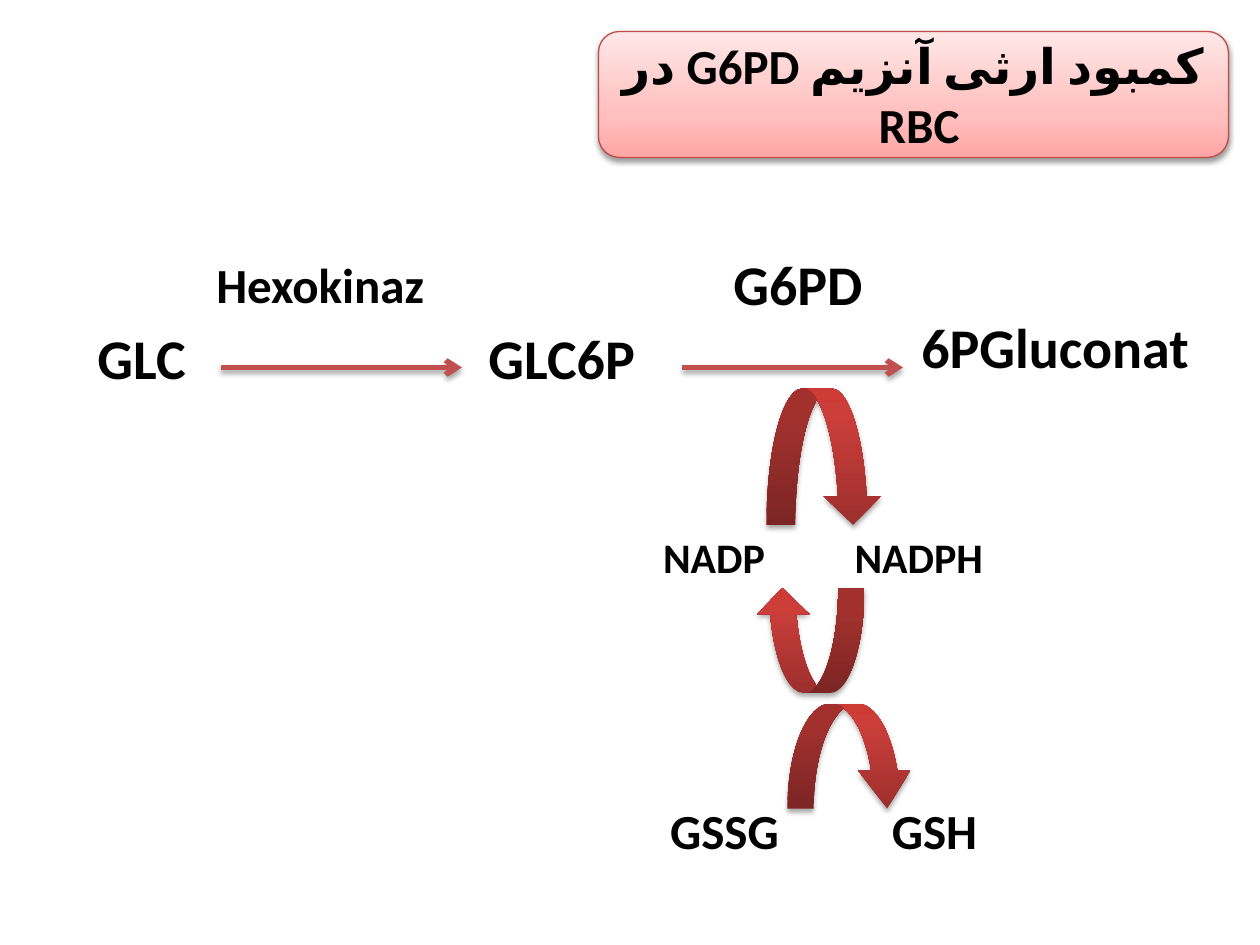
import copy

from lxml import etree
from pptx import Presentation
from pptx import util as u
from pptx.dml.color import RGBColor
from pptx.enum import shapes, text
from pptx.oxml.ns import qn

Pt = u.Pt
WHITE = RGBColor(0xFF, 0xFF, 0xFF)
BLACK = RGBColor(0, 0, 0)
RED = RGBColor(0xC0, 0x50, 0x4D)
TITLE_EDGE = RGBColor(0xBF, 0x4C, 0x48)
ARROW_STOPS = [(0, RGBColor(0x9C, 0x2F, 0x2D)), (0.8, RGBColor(0xCB, 0x3E, 0x3A)),
               (1, RGBColor(0xCE, 0x3B, 0x37))]
TITLE_STOPS = [(0, RGBColor(0xFF, 0xA6, 0xA5)), (0.35, RGBColor(0xFF, 0xC0, 0xBF)),
               (1, RGBColor(0xFF, 0xE7, 0xE7))]
RECT = shapes.MSO_SHAPE.RECTANGLE
ROUNDED = shapes.MSO_SHAPE.ROUNDED_RECTANGLE
DOWN = shapes.MSO_SHAPE.CURVED_DOWN_ARROW
UP = shapes.MSO_SHAPE.CURVED_UP_ARROW


def set_attrs(obj, **fmt):
    for name, value in fmt.items():
        setattr(obj, name, value)


def add_shadow(sp, opacity, distance):
    spPr = sp._element.spPr
    effects = spPr.find(qn("a:effectLst"))
    if effects is None:
        effects = etree.SubElement(spPr, qn("a:effectLst"))
    shadow = etree.SubElement(effects, qn("a:outerShdw"), blurRad=str(Pt(3.1)),
                              dist=str(Pt(distance)), dir="5400000", rotWithShape="0")
    color = etree.SubElement(shadow, qn("a:srgbClr"), val=str(BLACK))
    etree.SubElement(color, qn("a:alpha"), val=str(opacity * 1000))


def fill_gradient(sp, stops):
    sp.fill.gradient()
    sp.fill.gradient_angle = 90
    gs_list = sp._element.spPr.find(qn("a:gradFill")).find(qn("a:gsLst"))
    gs_list.append(copy.deepcopy(gs_list[-1]))
    for stop, (position, color) in zip(sp.fill.gradient_stops, stops):
        stop.position = position
        stop.color.rgb = color


def add_shape(s, kind, x, y, w, h):
    sp = s.shapes.add_shape(kind, Pt(x), Pt(y), Pt(w), Pt(h))
    sp.shadow.inherit = False
    return sp


def write_text(sp, words, size):
    tf = sp.text_frame
    set_attrs(tf, word_wrap=True, vertical_anchor=text.MSO_ANCHOR.MIDDLE)
    p = tf.paragraphs[0]
    p.alignment = text.PP_ALIGN.CENTER
    r = p.add_run()
    r.text = words
    set_attrs(r.font, name="Calibri", size=Pt(size), bold=True)
    r.font.color.rgb = BLACK
    return p


def add_label(s, words, size, x, y, w, h=72):
    sp = add_shape(s, RECT, x, y, w, h)
    sp.fill.solid()
    sp.fill.fore_color.rgb = WHITE
    sp.line.color.rgb = WHITE
    sp.line.width = Pt(2)
    write_text(sp, words, size)


def add_reaction(s, x1, x2, y):
    cx = s.shapes.add_connector(shapes.MSO_CONNECTOR.STRAIGHT, Pt(x1), Pt(y), Pt(x2), Pt(y))
    cx.line.color.rgb = RED
    cx.line.width = Pt(3)
    etree.SubElement(cx.line._get_or_add_ln(), qn("a:tailEnd"), type="arrow")
    add_shadow(cx, 35, 1.8)


def add_curved_arrow(s, kind, x, y, w, h, head=None, flip=False):
    sp = add_shape(s, kind, x, y, w, h)
    fill_gradient(sp, ARROW_STOPS)
    sp.line.fill.background()
    add_shadow(sp, 35, 1.8)
    if head:
        sp.adjustments[2] = head
    if flip:
        sp._element.spPr.find(qn("a:xfrm")).set("flipH", "1")


def build_title(s, x, y, w, h):
    sp = add_shape(s, ROUNDED, x, y, w, h)
    fill_gradient(sp, TITLE_STOPS)
    sp.line.color.rgb = TITLE_EDGE
    sp.line.width = Pt(0.75)
    add_shadow(sp, 38, 1.6)
    p = write_text(sp, "کمبود ارثی آنزیم G6PD در RBC ", 28)
    p._p.get_or_add_pPr().set("rtl", "1")
    rPr = p.runs[0]._r.get_or_add_rPr()
    rPr.set("lang", "fa-IR")
    etree.SubElement(rPr, qn("a:cs"), typeface="Calibri")


def build_pathway(s, x, y):
    add_label(s, "GLC", 32, x, y + 48, 102, 60)
    add_label(s, "GLC6P", 32, x + 198, y + 42, 186)
    add_label(s, "6PGluconat", 32, x + 480, y + 36, 186)
    add_reaction(s, x + 96, x + 234, y + 84)
    add_reaction(s, x + 360, x + 486, y + 84)
    add_label(s, "G6PD", 32, x + 372, y, 108)
    add_label(s, "Hexokinaz", 28, x + 78, y, 150)


def build_cycles(s, x, y):
    add_label(s, "NADP", 24, x, y + 60, 84)
    add_label(s, "NADPH", 24, x + 114, y + 60, 90)
    add_label(s, "GSSG", 28, x + 6, y + 216, 84)
    add_label(s, "GSH", 28, x + 132, y + 216, 72)
    add_curved_arrow(s, DOWN, x + 72, y, 66, 78)
    add_curved_arrow(s, UP, x + 66, y + 114, 62, 60, flip=True)
    add_curved_arrow(s, DOWN, x + 84, y + 180, 72, 60, head=0.364)


def main():
    prs = Presentation()
    set_attrs(prs, slide_width=Pt(720), slide_height=Pt(540))
    s = prs.slides.add_slide(prs.slide_layouts[6])
    build_pathway(s, 30, 126)
    build_cycles(s, 366, 222)
    build_title(s, 342, 18, 360, 72)
    prs.save("out.pptx")


if __name__ == "__main__":
    main()
